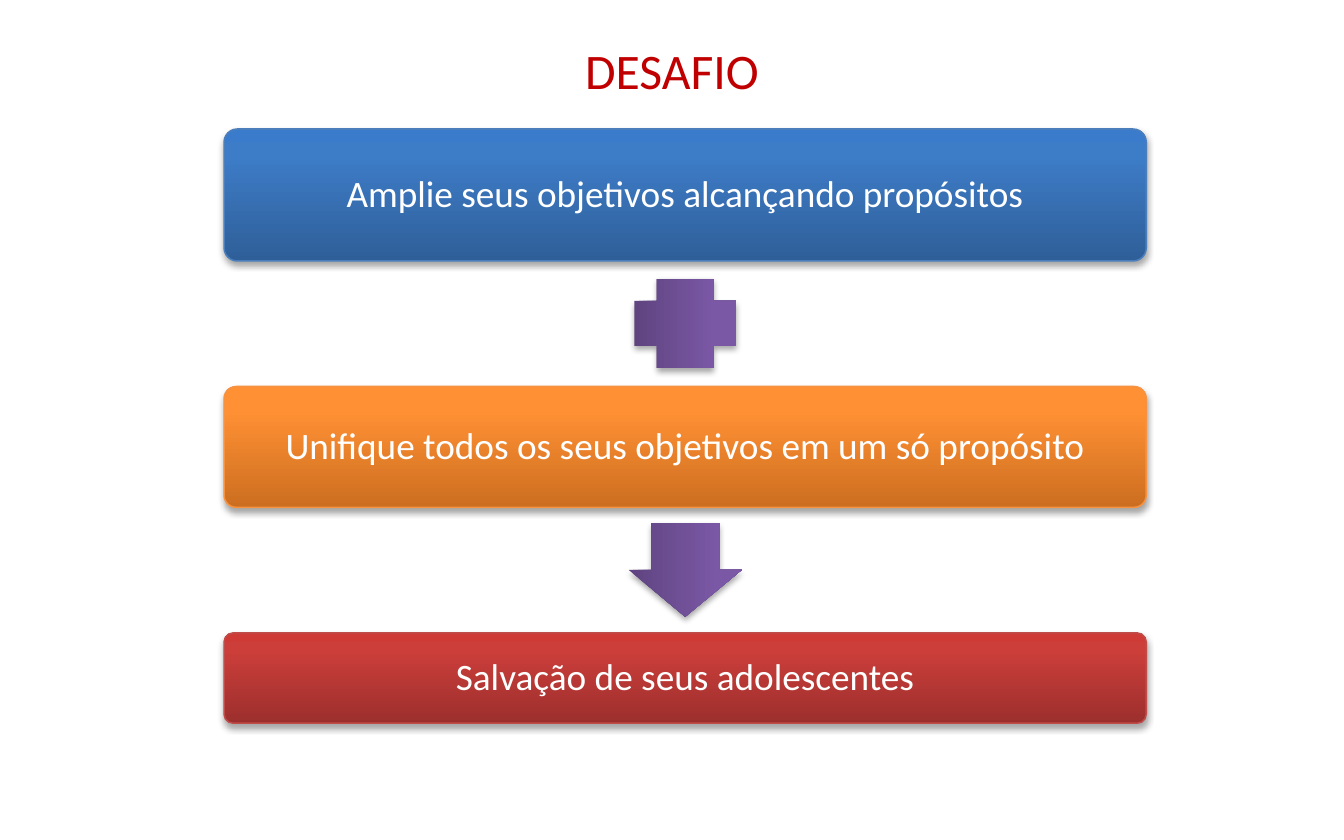
"""Build the DESAFIO slide: three steps joined by a plus sign and an arrow."""
from copy import deepcopy

from lxml.etree import SubElement
from pptx import Presentation
from pptx.dml.color import RGBColor
from pptx.enum.shapes import MSO_SHAPE as Shape
from pptx.enum.text import MSO_ANCHOR as Anchor, PP_ALIGN as Align
from pptx.oxml.ns import qn
from pptx.util import Cm, Pt

WHITE = RGBColor(0xFF, 0xFF, 0xFF)
TITLE_RED = RGBColor(0xC0, 0x00, 0x00)
BLUE_LINE = RGBColor(0x4B, 0x7E, 0xBC)
ORANGE_LINE = RGBColor(0xF6, 0x92, 0x40)
RED_LINE = RGBColor(0xBF, 0x4C, 0x48)
BLUES = RGBColor(0x2F, 0x5F, 0x99), RGBColor(0x3D, 0x7C, 0xC7), RGBColor(0x3A, 0x7C, 0xCB)
ORANGES = RGBColor(0xCC, 0x6E, 0x20), RGBColor(0xFF, 0x90, 0x34), RGBColor(0xFF, 0x91, 0x36)
REDS = RGBColor(0x9C, 0x2F, 0x2D), RGBColor(0xCB, 0x3E, 0x3A), RGBColor(0xCE, 0x3B, 0x37)
PURPLES = RGBColor(0x5F, 0x44, 0x80), RGBColor(0x7B, 0x58, 0xA6), RGBColor(0x7C, 0x57, 0xA8)

STEP_LEFT, STEP_WIDTH = 3.82, 15.72
CENTER = STEP_LEFT + STEP_WIDTH / 2


def write(shape, text, size, color):
    para = shape.text_frame.paragraphs[0]
    para.alignment = Align.CENTER
    span = para.add_run()
    span.text = text
    span.font.color.rgb = color
    for name, value in {"name": "Calibri", "size": Pt(size)}.items():
        setattr(span.font, name, value)
    return para


def shade(shape, colors):
    shape.fill.gradient()
    shape.fill.gradient_angle = 90
    stops = shape._element.spPr.find(".//" + qn("a:gsLst"))
    stops.append(deepcopy(stops[-1]))
    for stop, position, color in zip(shape.fill.gradient_stops, (0, 0.8, 1), colors):
        stop.position = position
        stop.color.rgb = color
    shape.shadow.inherit = False
    effects = shape._element.spPr.find(qn("a:effectLst"))
    shadow = SubElement(effects, qn("a:outerShdw"), blurRad=str(Pt(3.1)),
                        dist=str(Pt(1.8)), dir="5400000", rotWithShape="0")
    black = SubElement(shadow, qn("a:srgbClr"), val="000000")
    SubElement(black, qn("a:alpha"), val="35000")


deck = Presentation()
deck.slide_width, deck.slide_height = Cm(22.91), Cm(14.32)
page = deck.slides.add_slide(deck.slide_layouts[6])

title = page.shapes.add_textbox(0, Cm(0.55), deck.slide_width, Cm(1.14))
title.text_frame.word_wrap = True
write(title, "DESAFIO", 24, TITLE_RED)

steps = [
    ("Amplie seus objetivos alcançando propósitos", 2.2, 2.25, BLUES, BLUE_LINE),
    ("Unifique todos os seus objetivos em um só propósito", 6.59, 2.06, ORANGES, ORANGE_LINE),
    ("Salvação de seus adolescentes", 10.79, 1.54, REDS, RED_LINE),
]
for text, top, height, colors, line_color in steps:
    step = page.shapes.add_shape(Shape.ROUNDED_RECTANGLE, Cm(STEP_LEFT), Cm(top),
                                 Cm(STEP_WIDTH), Cm(height))
    step.adjustments[0] = 0.1
    shade(step, colors)
    step.line.color.rgb = line_color
    step.line.width = Pt(0.75)
    frame_format = {"word_wrap": True, "vertical_anchor": Anchor.MIDDLE}
    for side in ("left", "top", "right", "bottom"):
        frame_format[f"margin_{side}"] = Cm(0.18)
    for name, value in frame_format.items():
        setattr(step.text_frame, name, value)
    write(step, text, 18, WHITE).line_spacing = 0.9

links = [
    (Shape.CROSS, 4.65, 1.53, 1.73, [0.25]),
    (Shape.RIGHT_ARROW, 8.75, 1.6, 1.93, [0.6, 0.5]),
]
for kind, top, width, height, adjustments in links:
    link = page.shapes.add_shape(kind, Cm(CENTER - width / 2), Cm(top), Cm(width), Cm(height))
    link.rotation = 90
    for index, value in enumerate(adjustments):
        link.adjustments[index] = value
    shade(link, PURPLES)
    link.line.fill.background()

deck.save("out.pptx")
